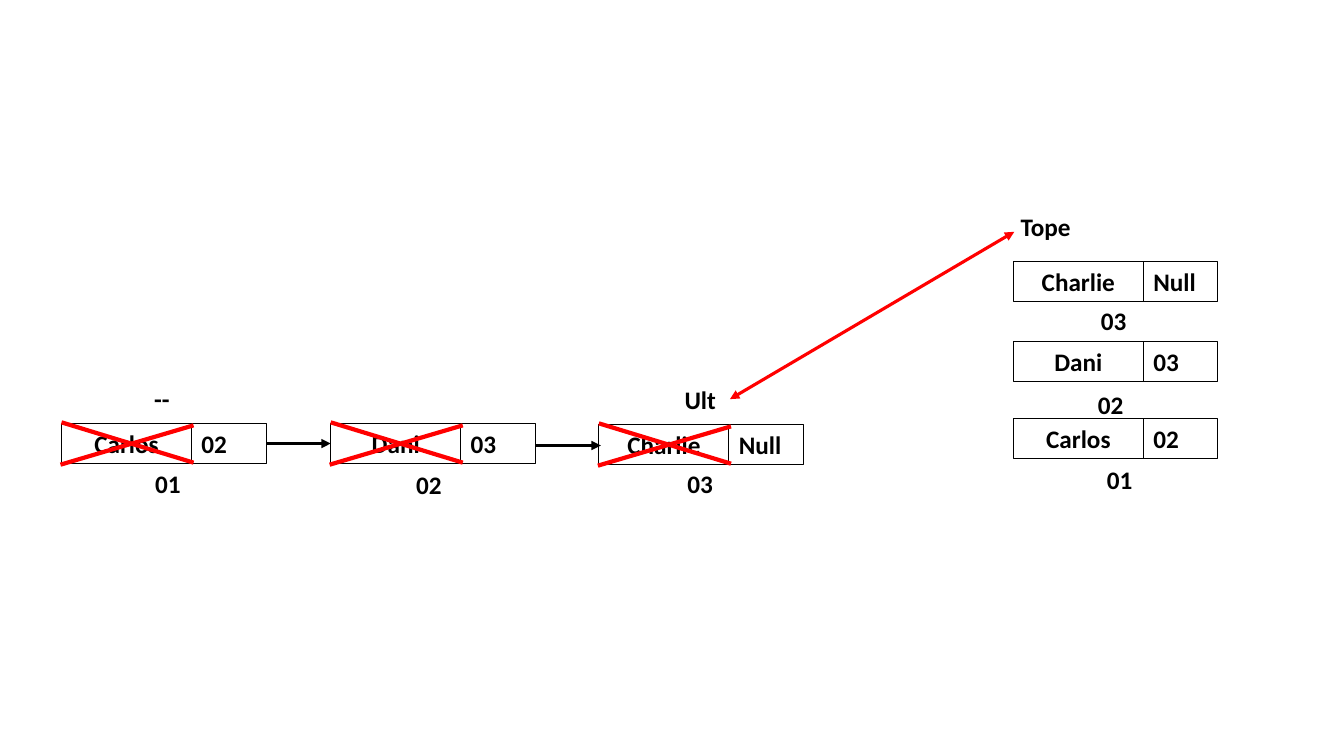
from lxml import etree
from pptx import Presentation
from pptx.dml.color import RGBColor
from pptx.enum.shapes import MSO_CONNECTOR, MSO_SHAPE
from pptx.enum.text import MSO_ANCHOR, MSO_AUTO_SIZE, PP_ALIGN
from pptx.oxml.ns import qn
from pptx.util import Pt

RECTANGLE = MSO_SHAPE.RECTANGLE
STRAIGHT = MSO_CONNECTOR.STRAIGHT
LEFT, CENTER = PP_ALIGN.LEFT, PP_ALIGN.CENTER

PX = 9144
COLORS = {"black": "000000", "red": "FF0000"}
FONT = {"name": "Calibri", "size": Pt(18), "bold": True}
FRAME = {
    "word_wrap": True,
    "auto_size": MSO_AUTO_SIZE.SHAPE_TO_FIT_TEXT,
    "vertical_anchor": MSO_ANCHOR.TOP,
}
NAME_WIDTH, LINK_WIDTH, LABEL_WIDTH, HEIGHT = 129, 74, 59, 40

presentation = Presentation()
presentation.slide_width = 1333 * PX
presentation.slide_height = 750 * PX
slide = presentation.slides.add_slide(presentation.slide_layouts[6])


def add_text(text, left, top, width, alignment=CENTER, boxed=False):
    box = [value * PX for value in (left, top, width, HEIGHT)]
    if boxed:
        shape = slide.shapes.add_shape(RECTANGLE, *box)
        shape.shadow.inherit = False
        shape.fill.background()
        shape.line.color.rgb = RGBColor.from_string(COLORS["black"])
        shape.line.width = Pt(0.75)
    else:
        shape = slide.shapes.add_textbox(*box)
    for key, value in FRAME.items():
        setattr(shape.text_frame, key, value)
    paragraph = shape.text_frame.paragraphs[0]
    paragraph.text = text
    paragraph.alignment = alignment
    for key, value in FONT.items():
        setattr(paragraph.font, key, value)
    paragraph.font.color.rgb = RGBColor.from_string(COLORS["black"])


def add_line(start_x, start_y, end_x, end_y, color, width, arrowheads=()):
    ends = [value * PX for value in (start_x, start_y, end_x, end_y)]
    connector = slide.shapes.add_connector(STRAIGHT, *ends)
    connector.line.color.rgb = RGBColor.from_string(COLORS[color])
    connector.line.width = Pt(width)
    outline = connector.line._get_or_add_ln()
    for arrowhead in arrowheads:
        etree.SubElement(outline, qn(f"a:{arrowhead}"), type="triangle")
    etree.SubElement(connector._element.spPr, qn("a:effectLst"))


queue_nodes = [
    ("Carlos", "02", 61, 420),
    ("Dani", "03", 328, 420),
    ("Charlie", "Null", 594, 421),
]
stack_nodes = [
    ("Carlos", "02", 1005, 415),
    ("Dani", "03", 1005, 339),
    ("Charlie", "Null", 1005, 259),
]
for name, link, left, top in queue_nodes + stack_nodes:
    add_text(name, left, top, NAME_WIDTH, boxed=True)
    add_text(link, left + NAME_WIDTH, top, LINK_WIDTH, LEFT, boxed=True)

labels = [
    ("--", 131, 375),
    ("Ult", 665, 376),
    ("01", 137, 460),
    ("02", 396, 461),
    ("03", 665, 460),
    ("01", 1081, 456),
    ("02", 1072, 381),
    ("03", 1075, 298),
]
for text, left, top in labels:
    add_text(text, left, top, LABEL_WIDTH)
add_text("Tope", 994, 205, 86)

for start_x, y in [(264, 440), (532, 442)]:
    add_line(start_x, y, start_x + 64, y, "black", 2.25, ["tailEnd"])
add_line(724, 396, 1006, 230, "red", 2.25, ["headEnd", "tailEnd"])

for name, link, left, top in queue_nodes:
    add_line(left, top - 1, left + 131, top + 39, "red", 3)
    add_line(left - 1, top + 41, left + 131, top + 2, "red", 3)

presentation.save("out.pptx")
